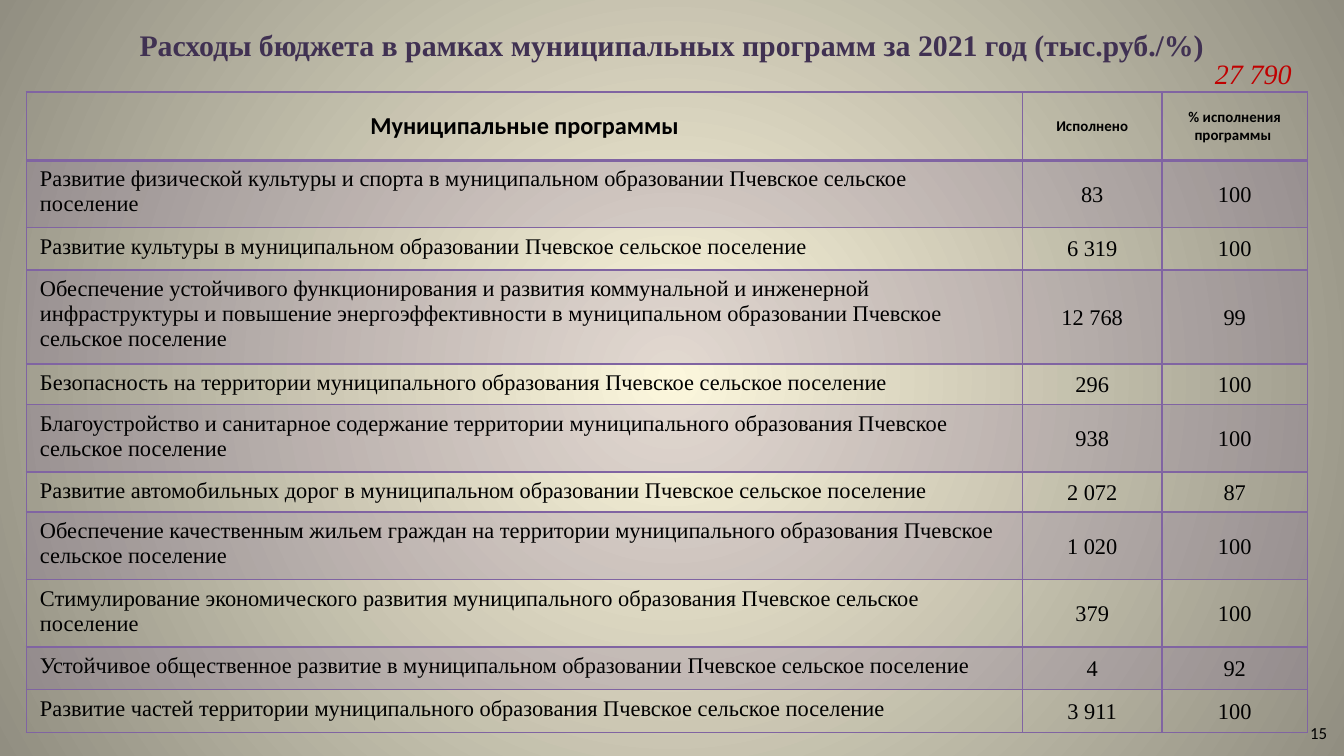
from lxml import etree
from pptx import Presentation
from pptx.dml import color as dml
from pptx.enum import text
from pptx.oxml import ns
from pptx.util import Pt

SERIF, SANS = "Times New Roman", "Calibri"
BLACK, PURPLE = "000000", "8064A2"
CENTER, LEFT = text.PP_ALIGN.CENTER, text.PP_ALIGN.LEFT

COLUMN_WIDTHS = [533.5, 74.9, 77.8]
HEADER_HEIGHT = 36.5
HEADINGS = [("Муниципальные программы", 13), ("Исполнено", 8),
            ("% исполнения программы ", 8)]

# Row height, programme, amount spent, percentage
PROGRAMMES = [
    (34, "Развитие физической культуры и спорта в муниципальном образовании "
     "Пчевское сельское поселение", "83", "100"),
    (22.8, "Развитие культуры в муниципальном образовании Пчевское сельское поселение",
     "6 319", "100"),
    (47, "Обеспечение устойчивого функционирования и развития коммунальной и инженерной "
     "инфраструктуры и повышение энергоэффективности в муниципальном образовании "
     "Пчевское сельское поселение", "12 768", "99"),
    (20.6, "Безопасность на территории муниципального образования Пчевское сельское поселение",
     "296", "100"),
    (33.8, "Благоустройство и санитарное содержание территории муниципального образования "
     "Пчевское сельское поселение", "938", "100"),
    (20.6, "Развитие автомобильных дорог в муниципальном образовании Пчевское сельское поселение",
     "2 072", "87"),
    (33.8, "Обеспечение качественным жильем граждан на территории муниципального образования "
     "Пчевское сельское поселение", "1 020", "100"),
    (33.8, "Стимулирование экономического развития муниципального образования "
     "Пчевское сельское поселение", "379", "100"),
    (23, "Устойчивое общественное развитие в муниципальном образовании "
     "Пчевское сельское поселение", "4", "92"),
    (23, "Развитие частей территории муниципального образования Пчевское сельское поселение",
     "3 911", "100"),
]


def rgb(value):
    return dml.RGBColor.from_string(value)


def write(frame, words, size, font, color=BLACK, align=LEFT, bold=False, italic=False):
    frame.text = words
    para = frame.paragraphs[0]
    para.alignment = align
    for span in para.runs:
        span.font.size = Pt(size)
        span.font.name = font
        span.font.bold = bold
        span.font.italic = italic
        span.font.color.rgb = rgb(color)


def add_text(page, left, top, width, height, words, size, font, wrap=True,
             anchor=text.MSO_ANCHOR.TOP, **style):
    box = page.shapes.add_textbox(Pt(left), Pt(top), Pt(width), Pt(height))
    box.text_frame.word_wrap = wrap
    box.text_frame.vertical_anchor = anchor
    write(box.text_frame, words, size, font, **style)


def paint_background(page, inner, outer):
    fill = page.background.fill
    fill.gradient()
    for stop, color, position in zip(fill.gradient_stops, (inner, outer), (0, 1)):
        stop.color.rgb = rgb(color)
        stop.position = position
    # Turn the linear gradient into a circular one around the centre
    gradient = page.element.xpath(".//p:bg//a:gradFill")[0]
    for line in gradient.findall(ns.qn("a:lin")):
        gradient.remove(line)
    circle = etree.SubElement(gradient, ns.qn("a:path"), path="circle")
    etree.SubElement(circle, ns.qn("a:fillToRect"),
                     {side: "50000" for side in "ltrb"})


def set_borders(cell, widths):
    """Widths are in the order left, right, top, bottom."""
    properties = cell._tc.get_or_add_tcPr()
    for place, (side, width) in enumerate(zip("LRTB", widths)):
        line = etree.Element(ns.qn(f"a:ln{side}"), w=str(Pt(width)))
        solid = etree.SubElement(line, ns.qn("a:solidFill"))
        etree.SubElement(solid, ns.qn("a:srgbClr"), val=PURPLE)
        properties.insert(place, line)


def fill_cell(cell, banded):
    if not banded:
        cell.fill.background()
        return
    cell.fill.solid()
    cell.fill.fore_color.rgb = rgb(PURPLE)
    shade = cell._tc.tcPr.xpath("./a:solidFill/a:srgbClr")[0]
    etree.SubElement(shade, ns.qn("a:alpha"), val="20000")


def add_programme_table(page):
    heights = [HEADER_HEIGHT] + [row[0] for row in PROGRAMMES]
    table = page.shapes.add_table(len(heights), len(COLUMN_WIDTHS), Pt(14.2), Pt(49.4),
                                  Pt(sum(COLUMN_WIDTHS)), Pt(sum(heights))).table
    for column, width in zip(table.columns, COLUMN_WIDTHS):
        column.width = Pt(width)
    for row, height in zip(table.rows, heights):
        row.height = Pt(height)

    # Header row
    for cell, (words, size) in zip(table.rows[0].cells, HEADINGS):
        write(cell.text_frame, words, size, SANS, align=CENTER, bold=True)
        cell.vertical_anchor = text.MSO_ANCHOR.MIDDLE
        fill_cell(cell, False)
        set_borders(cell, (1, 1, 1, 2))

    # Programme rows, every other one tinted
    for number, (_, *values) in enumerate(PROGRAMMES, start=1):
        for column, words in enumerate(values):
            cell = table.cell(number, column)
            write(cell.text_frame, words, 12, SERIF, align=CENTER if column else LEFT)
            if column:
                cell.vertical_anchor = text.MSO_ANCHOR.MIDDLE
                cell.margin_left = cell.margin_right = cell.margin_top = Pt(0.7)
                cell.margin_bottom = Pt(0)
            fill_cell(cell, number % 2 == 1)
            set_borders(cell, (1, 1, 2 if number == 1 else 1, 1))


def main():
    deck = Presentation()
    deck.slide_width, deck.slide_height = Pt(720), Pt(405)
    page = deck.slides.add_slide(deck.slide_layouts[6])
    paint_background(page, "FCF7DD", "918E81")

    # Title
    add_text(page, 36, 10.1, 648, 28.1,
             "Расходы бюджета в рамках муниципальных программ за 2021 год (тыс.руб./%)",
             16, SERIF, anchor=text.MSO_ANCHOR.MIDDLE, color="403152",
             align=CENTER, bold=True)

    add_programme_table(page)

    # Total and page number
    add_text(page, 643.7, 26.6, 56.9, 25.2, "27 790", 15, SERIF,
             color="C00000", italic=True)
    add_text(page, 694.8, 383.8, 23.8, 18, "15", 9, SANS, wrap=False)

    deck.save("out.pptx")


if __name__ == "__main__":
    main()
